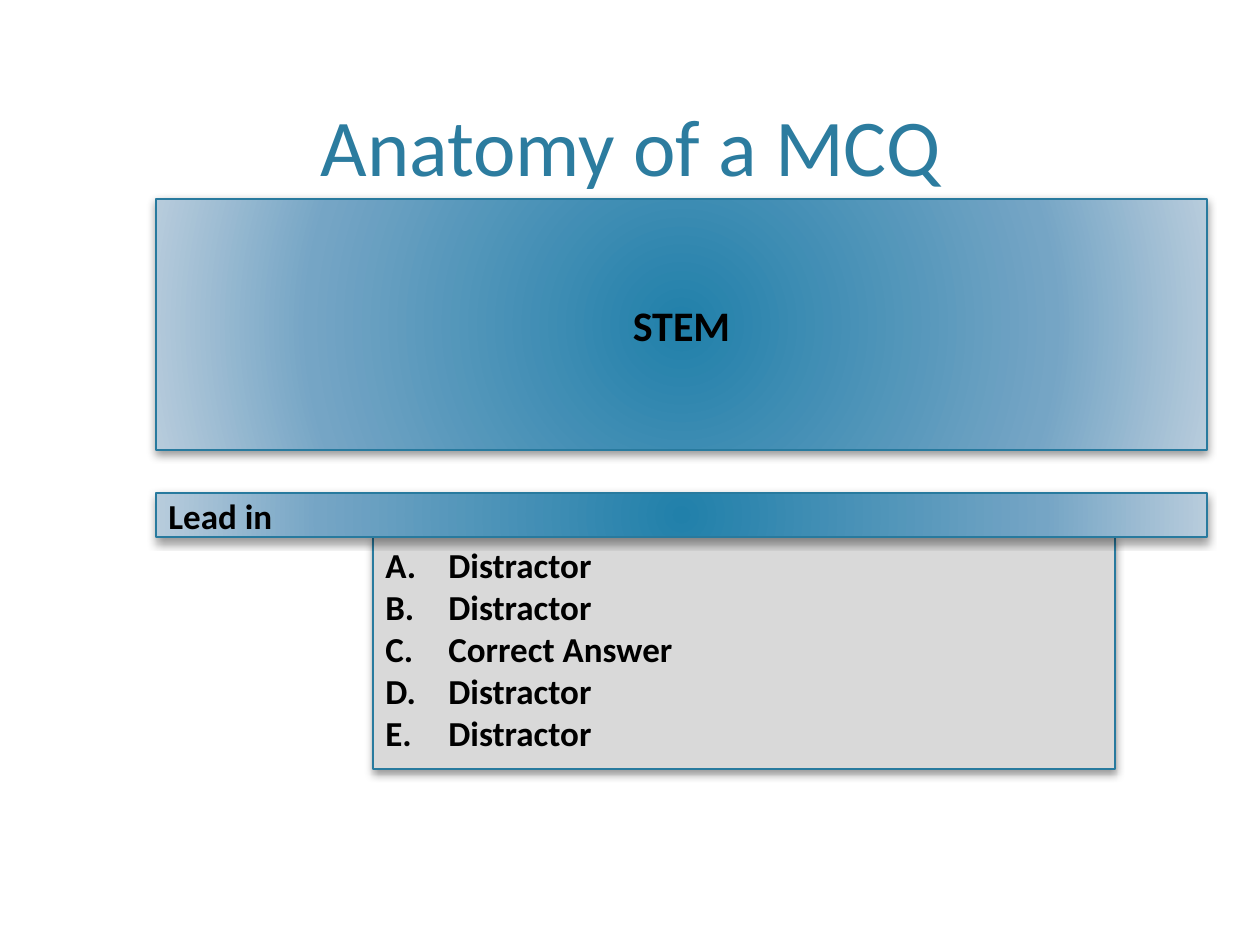
import pptx
import pptx.util
import pptx.oxml
import pptx.oxml.ns
import pptx.dml.color
import pptx.enum.shapes
import pptx.enum.text

SCALE = 914400 / 126
FONT = "Calibri"
COLORS = {
    "title": "2C7C9F", "line": "287A9E", "text": "000000", "gray": "D9D9D9",
    "core": "2180AA", "mid": "75A5C5", "edge": "B8CCDC", "shadow": "000000",
}
STOPS = [(0, "core"), (69, "mid"), (100, "edge")]
ANSWERS = ["Distractor", "Distractor", "Correct Answer", "Distractor", "Distractor"]
ALIGN = pptx.enum.text.PP_ALIGN
ANCHOR = pptx.enum.text.MSO_ANCHOR


def px(num):
    return pptx.util.Emu(round(num * SCALE))


def rgb(name):
    return pptx.dml.color.RGBColor.from_string(COLORS[name])


def node(xml):
    return pptx.oxml.parse_xml(xml.replace(">", f" {pptx.oxml.ns.nsdecls('a')}>", 1))


def write(shape, lines, size, color, align, anchor, bold=False):
    frame = shape.text_frame
    frame.word_wrap = True
    frame.vertical_anchor = anchor
    frame.text = "\n".join(lines)
    for para in frame.paragraphs:
        para.alignment = align
        para.font.name = FONT
        para.font.size = pptx.util.Pt(size)
        para.font.bold = bold
        para.font.color.rgb = rgb(color)


def glow(shape):
    shape.fill.background()
    stops = "".join(
        f'<a:gs pos="{pos * 1000}"><a:srgbClr val="{COLORS[name]}"/></a:gs>'
        for pos, name in STOPS)
    grad = node(
        f'<a:gradFill rotWithShape="1"><a:gsLst>{stops}</a:gsLst><a:path path="circle">'
        '<a:fillToRect l="100000" t="100000" r="100000" b="100000"/></a:path></a:gradFill>')
    props = shape.element.spPr
    props.replace(props.find(pptx.oxml.ns.qn("a:noFill")), grad)


def shade(shape):
    shape.shadow.inherit = False
    effects = shape.element.spPr.find(pptx.oxml.ns.qn("a:effectLst"))
    effects.append(node(
        '<a:outerShdw blurRad="63500" dist="25400" dir="5400000" rotWithShape="0">'
        f'<a:srgbClr val="{COLORS["shadow"]}"><a:alpha val="40000"/></a:srgbClr>'
        '</a:outerShdw>'))


def panel(slide, box, fill=None):
    shape = slide.shapes.add_shape(
        pptx.enum.shapes.MSO_SHAPE.RECTANGLE, *map(px, box))
    if fill:
        shape.fill.solid()
        shape.fill.fore_color.rgb = rgb(fill)
    else:
        glow(shape)
    shape.line.color.rgb = rgb("line")
    shape.line.width = pptx.util.Pt(1)
    shade(shape)
    return shape


def letter(shape):
    for para in shape.text_frame.paragraphs:
        props = para._p.get_or_add_pPr()
        props.set("marL", "457200")
        props.set("indent", "-457200")
        mark = node('<a:buAutoNum type="alphaUcPeriod"></a:buAutoNum>')
        props.insert_element_before(mark, "a:tabLst", "a:defRPr", "a:extLst")


def main():
    deck = pptx.Presentation()
    deck.slide_width, deck.slide_height = px(1260), px(945)
    slide = deck.slides.add_slide(deck.slide_layouts[6])

    title = slide.shapes.add_textbox(*map(px, (76, 15, 1109, 184)))
    write(title, ["Anatomy of a MCQ"], 46, "title", ALIGN.CENTER, ANCHOR.BOTTOM)

    stem = panel(slide, (156, 199, 1051, 251))
    write(stem, ["STEM"], 24, "text", ALIGN.CENTER, ANCHOR.MIDDLE, True)

    options = panel(slide, (373, 537, 742, 232), "gray")
    write(options, ANSWERS, 20, "text", ALIGN.LEFT, ANCHOR.TOP, True)
    letter(options)

    lead = panel(slide, (156, 493, 1051, 44))
    write(lead, ["Lead in"], 20, "text", ALIGN.LEFT, ANCHOR.MIDDLE, True)

    deck.save("out.pptx")


if __name__ == "__main__":
    main()
